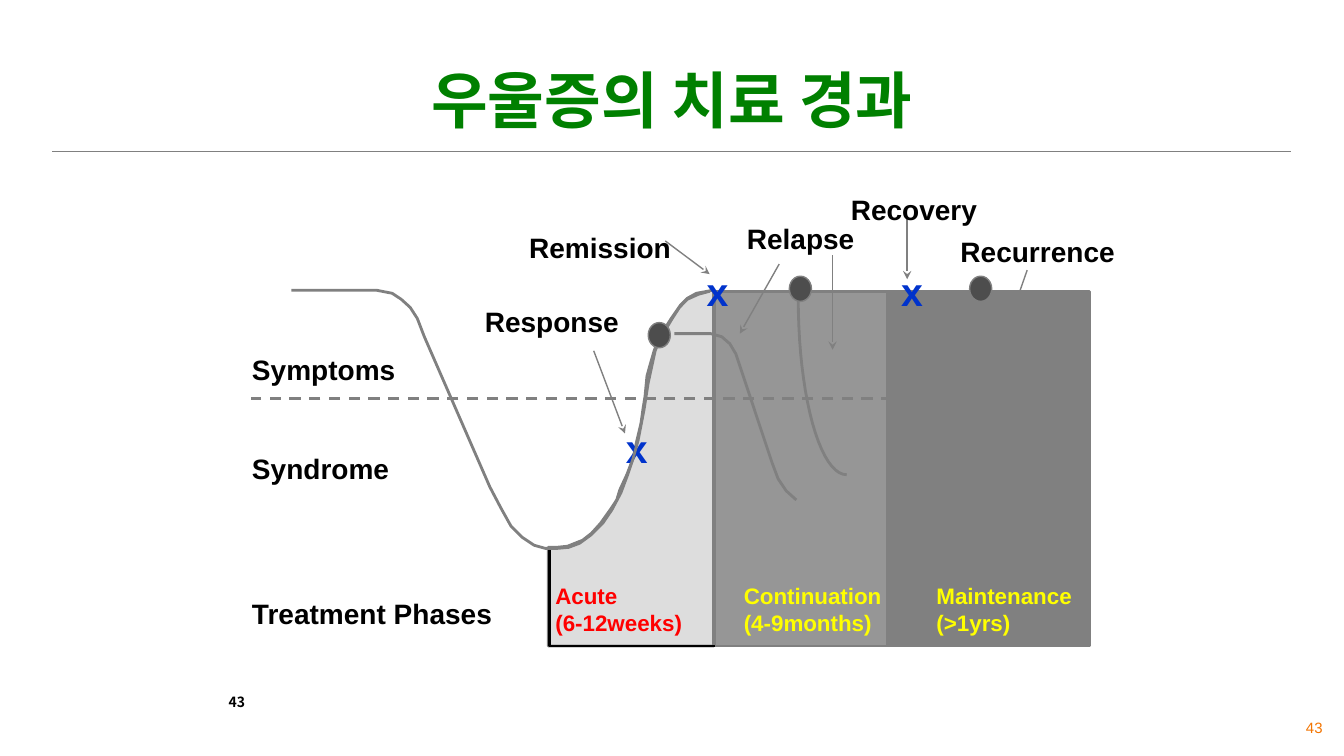
from math import cos, pi, sin

from lxml.etree import SubElement
from pptx import Presentation
from pptx.dml.color import RGBColor
from pptx.enum.dml import MSO_LINE
from pptx.enum.shapes import MSO_CONNECTOR, MSO_SHAPE
from pptx.enum.text import MSO_ANCHOR, PP_ALIGN
from pptx.oxml.ns import qn
from pptx.util import Pt

GREEN = RGBColor(0x00, 0x80, 0x00)
ORANGE = RGBColor(0xF3, 0x75, 0x02)
BLACK = RGBColor(0x00, 0x00, 0x00)
GRAY = RGBColor(0x80, 0x80, 0x80)
MID_GRAY = RGBColor(0x96, 0x96, 0x96)
PALE_GRAY = RGBColor(0xDD, 0xDD, 0xDD)
DARK_GRAY = RGBColor(0x4D, 0x4D, 0x4D)
YELLOW = RGBColor(0xFF, 0xFF, 0x00)
RED = RGBColor(0xFF, 0x00, 0x00)
BLUE = RGBColor(0x00, 0x33, 0xCC)
LATIN = "Arial"
KOREAN = "Noto Sans CJK KR"

ACUTE_OUTLINE = [
    (329.8, 63.4), (329.8, 317.5), (211.7, 317.5), (211.7, 247), (217.4, 247),
    (225.4, 246.2), (236.2, 241.9), (242.6, 236.9), (249.1, 229.7), (256.3, 219.6),
    (260.6, 213.1), (262.8, 205.9), (267.8, 195.1), (272.2, 183.6), (275, 170.6),
    (277.9, 158.4), (279.4, 147.6), (280.8, 139), (282.2, 124.6), (284.4, 116.6),
    (287.3, 106.6), (290.9, 97.2), (299.5, 83.5), (306, 74.2), (311, 69.1),
    (317.5, 65.5), (329, 63.4),
]
MOOD_CURVE = [
    (28.1, 63.4), (89.3, 63.4), (100.1, 65.5), (106.6, 69.8), (113, 75.6),
    (118.1, 83.5), (123.1, 96.5), (169.9, 203.8), (177.8, 218.9), (185, 231.8),
    (193, 239.8), (201.6, 245.5), (209.5, 247.7), (218.2, 247.7), (226.1, 247),
    (234, 244.1), (241.9, 238.3), (250.6, 229.7), (257, 220.3), (263.5, 208.1),
    (268.6, 194.4), (272.2, 183.6), (275.8, 170.6), (280.1, 148.3), (283, 129.6),
    (288, 106.6), (291.6, 97.9), (300.2, 83.5), (305.3, 75.6), (311, 69.8),
    (319, 66.2), (326.9, 64.1),
]
EARLY_RELAPSE = [
    (301.7, 94.3), (319, 94.3), (327.6, 94.3), (335.5, 96.5), (341.3, 101.5),
    (345.6, 108.7), (371.5, 186.5), (375.8, 198), (381.6, 206.6), (388.8, 213.1),
]
LATE_RELAPSE = [
    (424.8 + 34.6 * cos(step * pi / 40), 69.1 + 126 * sin(step * pi / 40))
    for step in range(20, 41)
]
RECURRENCE_CURVE = [
    (518.4, 70.6), (518.4, 79.9), (518.4, 85.7), (521.3, 90.7), (548.6, 141.8),
    (553, 149), (554.4, 153.4), (555.1, 162), (555.1, 175), (555.8, 190.1),
]
ACUTE_BORDER = [(212.4, 247.7), (212.4, 317.5), (330.5, 317.5)]
ARROWS = [
    (376.6, 44.6, 348.5, 94.3),
    (295.2, 28.1, 326.9, 51.8),
    (244.1, 106.6, 266.4, 165.6),
    (553.7, 49, 537.1, 96.5),
    (414.7, 38.2, 414.7, 105.8),
    (468, 10.8, 468, 55.4),
]
EVENTS = [
    ("Relapse", 345.6, 10.1, 93.6),
    ("Recovery", 419.8, -10.8, 107.3),
    ("Recurrence", 498.2, 19.4, 127.4),
    ("Remission", 190.1, 16.6, 118.1),
    ("Response", 158.4, 69.1, 113),
]
LEVELS = [
    ("Symptoms", 103.7, 171.4),
    ("Syndrome", 174.2, 171.4),
    ("Treatment Phases", 277.9, 211),
]
PHASES = [
    ("Acute\n(6-12weeks)", 208.8, 117.4, RED),
    ("Continuation\n(4-9months)", 343.4, 115.9, YELLOW),
    ("Maintenance\n(>1yrs)", 481, 113.8, YELLOW),
]
MILESTONES = [(455.8, 42.5), (259.2, 154.8), (316.8, 42.5)]
EPISODES = [(383.8, 53.3), (283, 86.4), (512.6, 53.3)]


def write(slide, words, left, top, width, height, size, color, font=LATIN, bold=True,
          wrap=False, align=PP_ALIGN.LEFT, anchor=MSO_ANCHOR.TOP, inset=(7.2, 3.6)):
    frame = slide.shapes.add_textbox(Pt(left), Pt(top), Pt(width), Pt(height)).text_frame
    frame.word_wrap = wrap
    frame.vertical_anchor = anchor
    frame.margin_left = frame.margin_right = Pt(inset[0])
    frame.margin_top = frame.margin_bottom = Pt(inset[1])
    frame.text = words
    for paragraph in frame.paragraphs:
        paragraph.alignment = align
        paragraph.font.size = Pt(size)
        paragraph.font.bold = bold
        paragraph.font.name = font
        paragraph.font.color.rgb = color
        defaults = paragraph._p.pPr.find(qn("a:defRPr"))
        SubElement(defaults, qn("a:ea"), typeface=font)


def paint(shape, fill, line, weight):
    shape.shadow.inherit = False
    if fill is None:
        shape.fill.background()
    else:
        shape.fill.solid()
        shape.fill.fore_color.rgb = fill
    shape.line.color.rgb = line
    shape.line.width = Pt(weight)


def draw_preset(slide, kind, left, top, width, height, fill, weight):
    shape = slide.shapes.add_shape(kind, Pt(left), Pt(top), Pt(width), Pt(height))
    paint(shape, fill, GRAY, weight)


def draw_path(slide, left, top, points, fill=None, line=GRAY):
    corners = [(Pt(left + x), Pt(top + y)) for x, y in points]
    builder = slide.shapes.build_freeform(*corners[0], scale=1.0)
    builder.add_line_segments(corners[1:], close=fill is not None)
    paint(builder.convert_to_shape(), fill, line, 2)


def draw_line(slide, x1, y1, x2, y2, weight=1, arrow=False, dash=None):
    line = slide.shapes.add_connector(MSO_CONNECTOR.STRAIGHT, Pt(x1), Pt(y1), Pt(x2), Pt(y2))
    line.line.color.rgb = GRAY
    line.line.width = Pt(weight)
    if dash:
        line.line.dash_style = dash
    if arrow:
        SubElement(line.line._get_or_add_ln(), qn("a:tailEnd"), type="stealth")
    SubElement(line._element.spPr, qn("a:effectLst"))


def add_header(slide, left, top, width):
    draw_line(slide, left, top + 68.4, left + width, top + 68.4)
    write(slide, "우울증의 치료 경과", left + 118.8, top, 648, 61.2, 44, GREEN, KOREAN,
          wrap=True, align=PP_ALIGN.CENTER, anchor=MSO_ANCHOR.BOTTOM)


def add_page_numbers(slide, left, top):
    write(slide, "43", left, top, 167.8, 36, 10, BLACK, KOREAN, wrap=True)
    write(slide, "43", left + 768.2, top + 18, 27.4, 20.2, 10.7, ORANGE, bold=False,
          align=PP_ALIGN.RIGHT)


def add_course_diagram(slide, left, top):
    inset = (7.92, 4.32)
    draw_preset(slide, MSO_SHAPE.RECTANGLE, left + 453.6, top + 64.1, 144.7, 253.4, GRAY, 2)
    draw_path(slide, left, top, ACUTE_OUTLINE, PALE_GRAY)
    draw_preset(slide, MSO_SHAPE.RECTANGLE, left + 330.5, top + 64.1, 138.2, 253.4, MID_GRAY, 2)
    draw_preset(slide, MSO_SHAPE.RECTANGLE, left + 453.6, top + 64.1, 15.1, 253.4, GRAY, 2)
    for x1, y1, x2, y2 in ARROWS:
        draw_line(slide, left + x1, top + y1, left + x2, top + y2, arrow=True)
    for event, x, y, width in EVENTS:
        write(slide, event, left + x, top + y, width, 32.4, 20, BLACK, inset=inset)
    for phase, x, width, color in PHASES:
        write(slide, phase, left + x, top + 267.8, width, 46.8, 16, color, inset=inset)
    for level, y, width in LEVELS:
        write(slide, level, left - 7.9, top + y, width, 31.7, 20, BLACK, wrap=True, inset=inset)
    for curve in (RECURRENCE_CURVE, EARLY_RELAPSE):
        draw_path(slide, left, top, curve)
    for x, y in MILESTONES:
        write(slide, "x", left + x, top + y, 31.7, 41.8, 28, BLUE, inset=inset)
    draw_line(slide, left + 598.3, top + 140.4, left - 0.7, top + 140.4, 2, dash=MSO_LINE.DASH)
    draw_path(slide, left, top, ACUTE_BORDER, line=BLACK)
    for curve in (MOOD_CURVE, LATE_RELAPSE):
        draw_path(slide, left, top, curve)
    for x, y in EPISODES:
        draw_preset(slide, MSO_SHAPE.OVAL, left + x, top + y, 15.8, 18, DARK_GRAY, 1)


def main():
    deck = Presentation()
    deck.slide_width, deck.slide_height = Pt(960), Pt(540)
    slide = deck.slides.add_slide(deck.slide_layouts[6])
    add_header(slide, 37.4, 39.6, 884.9)
    add_page_numbers(slide, 156.2, 491.8)
    add_course_diagram(slide, 180, 144)
    deck.save("out.pptx")


if __name__ == "__main__":
    main()
